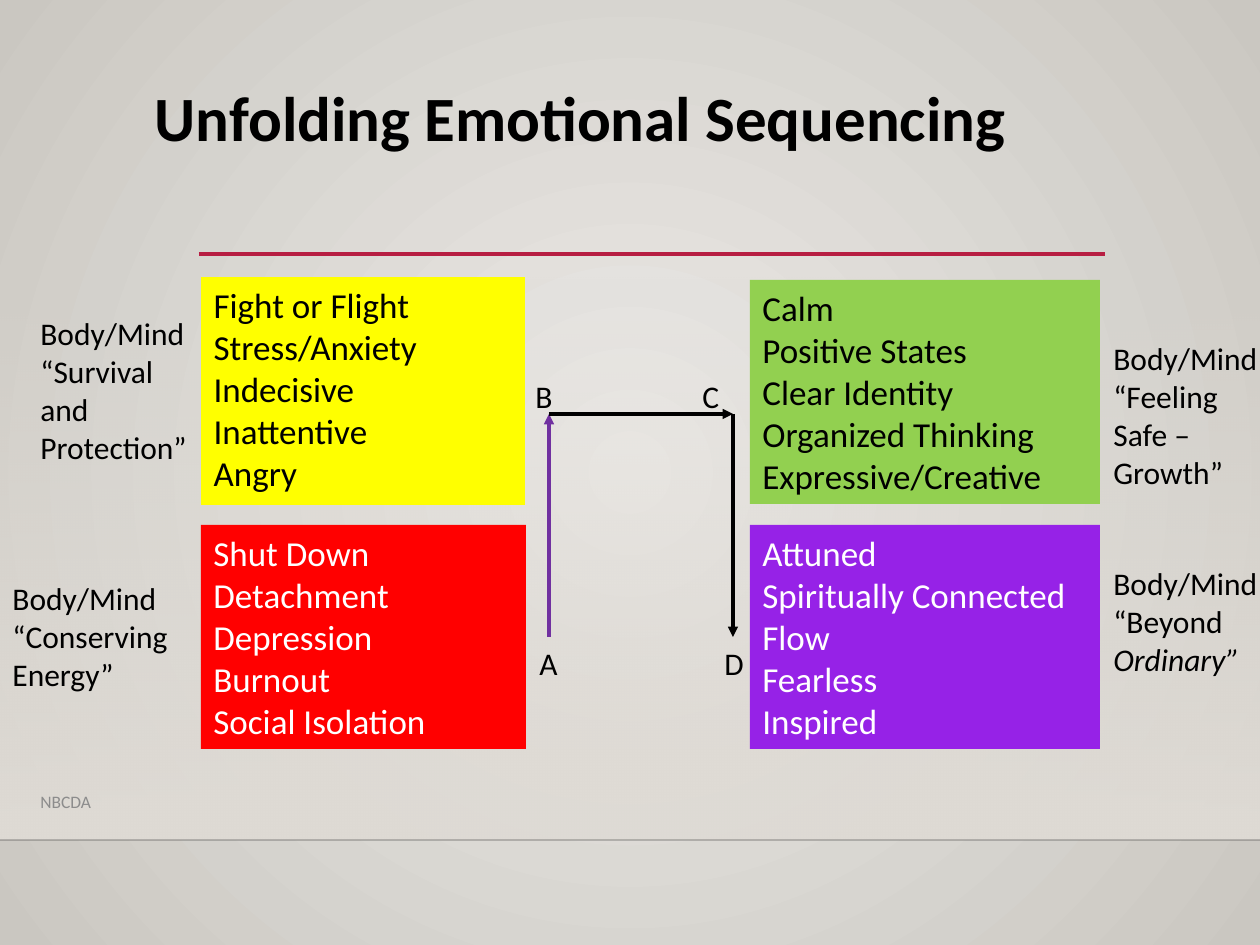
from lxml import etree
from pptx import Presentation
from pptx import util as u
from pptx.dml.color import RGBColor
from pptx.enum import shapes, text
from pptx.oxml import ns

PX = 914400 / 126
FONT = "Calibri"
COLOURS = {
    "glow": "ECEAE7", "edge": "CAC7C1", "panel": "DFDBD5", "rule": "B71E42",
    "floor": "000001", "black": "000000", "white": "FFFFFF", "grey": "8C8C8C",
    "yellow": "FFFF00", "red": "FF0000", "green": "92D050", "violet": "9622E7",
    "purple": "7030A0",
}
FIGHT = ["Fight or Flight", "Stress/Anxiety", "Indecisive", "Inattentive", "Angry"]
STATES = [
    ((201, 525, 325, 224), "red", "white",
     ["Shut Down", "Detachment", "Depression", "Burnout", "Social Isolation"]),
    ((750, 280, 350, 224), "green", "black",
     ["Calm", "Positive States", "Clear Identity", "Organized Thinking",
      "Expressive/Creative"]),
    ((750, 525, 350, 224), "violet", "white",
     ["Attuned", "Spiritually Connected", "Flow", "Fearless", "Inspired"]),
]
NOTES = [
    ((0, 573, 194, 127), ["Body/Mind", "“Conserving", "Energy”"]),
    ((28, 308, 181, 165), ["Body/Mind", "“Survival and Protection”"]),
    ((1101, 333, 174, 165), ["Body/Mind", "“Feeling", "Safe – Growth”"]),
    ((1101, 558, 174, 127), ["Body/Mind", "“Beyond", "Ordinary”"]),
]
LEFT, RIGHT, TOP, BOTTOM = 549, 733, 414, 637
ARROWS = [
    ((LEFT, BOTTOM, LEFT, TOP), "purple"),
    ((LEFT, TOP, RIGHT, TOP), "black"),
    ((RIGHT, TOP, RIGHT, BOTTOM), "black"),
]
LETTERS = [("A", 527, 638, 42), ("B", 523, 371, 33), ("C", 690, 371, 43),
           ("D", 712, 638, 38)]


def px(*lengths):
    """Turn pixel lengths into EMU."""
    return [u.Emu(round(length * PX)) for length in lengths]


def rgb(name):
    """Look up a named colour."""
    return RGBColor.from_string(COLOURS[name])


def add_child(parent, tag, **attributes):
    """Append a DrawingML element and return it."""
    return etree.SubElement(parent, ns.qn(tag), attributes)


def write(box, lines, size, colour="black", bold=False,
          anchor=text.MSO_ANCHOR.TOP):
    """Fill a box with plain left-aligned paragraphs."""
    frame = box.text_frame
    frame.text = "\n".join(lines)
    frame.word_wrap = True
    frame.auto_size = text.MSO_AUTO_SIZE.NONE
    frame.vertical_anchor = anchor
    for para in frame.paragraphs:
        properties = para._p.get_or_add_pPr()
        properties.set("marL", "0")
        properties.set("indent", "0")
        add_child(properties, "a:buNone")
        para.alignment = text.PP_ALIGN.LEFT
        para.space_before = u.Pt(0)
        para.font.name = FONT
        para.font.size = u.Pt(size)
        para.font.bold = bold
        para.font.color.rgb = rgb(colour)


def place(box, area):
    """Move and size a placeholder."""
    box.left, box.top, box.width, box.height = px(*area)


def add_text(page, area, lines, size=18, **style):
    """Add a text box."""
    box = page.shapes.add_textbox(*px(*area))
    write(box, lines, size, **style)
    return box


def add_block(page, area):
    """Add a rectangle without outline or shadow."""
    box = page.shapes.add_shape(shapes.MSO_SHAPE.RECTANGLE, *px(*area))
    box.shadow.inherit = False
    box.line.fill.background()
    return box


def add_state(page, area, fill, colour, lines):
    """Add a coloured block listing emotional states."""
    box = add_block(page, area)
    box.fill.solid()
    box.fill.fore_color.rgb = rgb(fill)
    write(box, lines, 20, colour)


def add_line(page, ends, colour, width, arrow=False):
    """Add a straight line, with an arrowhead if wanted."""
    line = page.shapes.add_connector(shapes.MSO_CONNECTOR.STRAIGHT, *px(*ends))
    line.line.color.rgb = rgb(colour)
    line.line.width = u.Pt(width)
    if arrow:
        add_child(line.line._get_or_add_ln(), "a:tailEnd", type="triangle")
    add_child(line._element.spPr, "a:effectLst")
    return line


def set_alpha(element, percent):
    """Set the opacity of the first colour inside an element."""
    colour = element.find(".//" + ns.qn("a:srgbClr"))
    add_child(colour, "a:alpha", val=str(percent * 1000))


def set_gradient(fill, start, end):
    """Give a fill a two-colour gradient running downwards."""
    fill.gradient()
    fill.gradient_angle = 270
    for stop, name in zip(fill.gradient_stops, (start, end)):
        stop.color.rgb = rgb(name)


def add_backdrop(page):
    """Paint the radial background, the fading panel and the two rules."""
    set_gradient(page.background.fill, "glow", "edge")
    linear = page._element.find(".//" + ns.qn("a:lin"))
    gradient = linear.getparent()
    gradient.remove(linear)
    circle = add_child(gradient, "a:path", path="circle")
    add_child(circle, "a:fillToRect", **dict.fromkeys("ltrb", "50000"))

    panel = add_block(page, (0, 277, 1260, 563))
    set_gradient(panel.fill, "panel", "panel")
    set_alpha(panel._element, 0)
    floor = add_line(page, (0, 840, 1260, 840), "floor", 1)
    set_alpha(floor._element, 20)
    rule = add_line(page, (199, 254, 1105, 254), "rule", 2.5)
    for item in (panel, floor, rule):
        page.shapes.title._element.addprevious(item._element)


def main():
    """Build the slide and save it."""
    deck = Presentation()
    deck.slide_width, deck.slide_height = px(1260, 945)
    page = deck.slides.add_slide(deck.slide_layouts[1])
    add_backdrop(page)

    title, body = page.placeholders
    place(title, (142, 72, 998, 89))
    write(title, ["Unfolding Emotional Sequencing"], 36, bold=True)
    place(body, (201, 277, 324, 228))
    body.fill.solid()
    body.fill.fore_color.rgb = rgb("yellow")
    write(body, FIGHT, 20)

    for state in STATES:
        add_state(page, *state)
    for area, lines in NOTES:
        note = add_text(page, area, lines)
    note.text_frame.paragraphs[-1].runs[0].font.italic = True
    for ends, colour in ARROWS:
        add_line(page, ends, colour, 1.75, arrow=True)
    for letter, left, top, width in LETTERS:
        add_text(page, (left, top, width, 50), [letter])
    add_text(page, (28, 780, 556, 43), ["NBCDA"], 10, colour="grey",
             anchor=text.MSO_ANCHOR.MIDDLE)
    deck.save("out.pptx")


if __name__ == "__main__":
    main()
